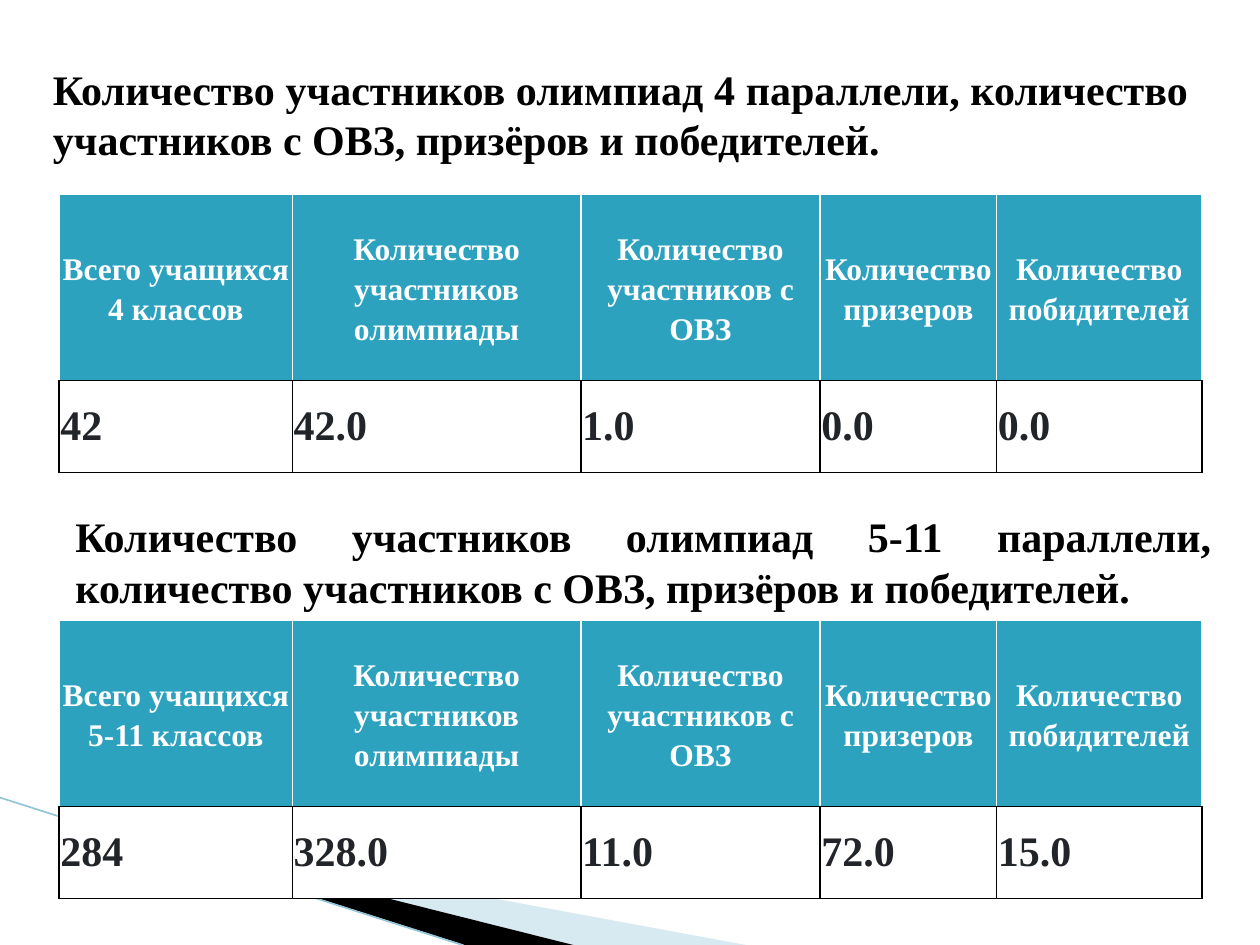
from lxml import etree
from pptx import Presentation
from pptx.dml.color import RGBColor as RGB
from pptx.enum.shapes import MSO_CONNECTOR as LINE
from pptx.enum.text import MSO_ANCHOR as ANCHOR, PP_ALIGN as ALIGN
from pptx.oxml import parse_xml
from pptx.oxml.ns import nsdecls, qn
from pptx.util import Inches, Pt

HUES = {"head": "2DA2BF", "white": "FFFFFF", "black": "000000",
        "ink": "212529", "pale": "9CCADC", "line": "93C5D8"}


def write(frame, text, size, hue, align):
    para = frame.paragraphs[0]
    para.alignment = align
    run = para.add_run()
    run.text = text
    run.font.name = "Times New Roman"
    run.font.size = Pt(size)
    run.font.bold = True
    run.font.color.rgb = RGB.from_string(HUES[hue])
    return para


def edge(cell, side, hue):
    """Draw one side (L, R, T or B) of a cell."""
    cell._tc.get_or_add_tcPr().append(parse_xml(
        f'<a:ln{side} {nsdecls("a")} w="12700"><a:solidFill>'
        f'<a:srgbClr val="{HUES[hue]}"/></a:solidFill></a:ln{side}>'))


deck = Presentation()
deck.slide_width, deck.slide_height = Inches(10), Inches(7.5)
slide = deck.slides.add_slide(deck.slide_layouts[5])
shapes = slide.shapes

# Corner wedges
wedges = [
    ("pale", 40, [(0.55, 6.51), (5.92, 7.5), (4.54, 7.5), (0.55, 6.5)]),
    ("black", 100, [(0.53, 6.49), (4.55, 7.5), (3.69, 7.5), (0.54, 6.5)]),
]
for hue, alpha, spots in wedges:
    spots = [(Inches(x), Inches(y)) for x, y in spots]
    pen = shapes.build_freeform(*spots[0], scale=1.0)
    pen.add_line_segments(spots[1:], close=True)
    wedge = pen.convert_to_shape()
    wedge.shadow.inherit = False
    wedge.line.fill.background()
    wedge.fill.solid()
    wedge.fill.fore_color.rgb = RGB.from_string(HUES[hue])
    if alpha < 100:
        color = wedge._element.spPr.find(f'{qn("a:solidFill")}/{qn("a:srgbClr")}')
        etree.SubElement(color, qn("a:alpha")).set("val", str(alpha * 1000))

rule = shapes.add_connector(LINE.STRAIGHT, Inches(0), Inches(6.33),
                            Inches(3.67), Inches(7.5))
rule.line.color.rgb = RGB.from_string(HUES["line"])
rule.line.width = Pt(0.95)
etree.SubElement(rule._element.spPr, qn("a:effectLst"))

# Headings
title = shapes.title
title.left, title.top = Inches(0.32), Inches(0.52)
title.width, title.height = Inches(9.21), Inches(1.12)
second = shapes.add_textbox(Inches(0.5), Inches(3.98), Inches(9.21), Inches(1.31))
for box, grade in [(title, "4"), (second, "5-11")]:
    frame = box.text_frame
    frame.word_wrap = True
    frame.vertical_anchor = ANCHOR.MIDDLE
    frame.margin_left = frame.margin_right = Inches(0.1)
    frame.margin_top, frame.margin_bottom = Inches(0.05), Inches(0.41)
    write(frame, f"Количество участников олимпиад {grade} параллели, "
          "количество участников с ОВЗ, призёров и победителей.",
          24, "black", ALIGN.JUSTIFY)

# Tables
heads = ["Количество участников олимпиады", "Количество участников с ОВЗ",
         "Количество призеров", "Количество побидителей"]
wide = [1.85, 2.29, 1.9, 1.4, 1.63]
tall = [1.48, 0.73]
tables = [
    (1.54, "4", ["42", "42.0", "1.0", "0.0", "0.0"]),
    (4.92, "5-11", ["284", "328.0", "11.0", "72.0", "15.0"]),
]
for top, grade, counts in tables:
    table = shapes.add_table(2, len(wide), Inches(0.47), Inches(top),
                             Inches(sum(wide)), Inches(sum(tall))).table
    for col, width in zip(table.columns, wide):
        col.width = Inches(width)
    for row, height in zip(table.rows, tall):
        row.height = Inches(height)
    rows = [[f"Всего учащихся {grade} классов", *heads], counts]
    for r, texts in enumerate(rows):
        for c, text in enumerate(texts):
            cell = table.cell(r, c)
            cell.vertical_anchor = ANCHOR.MIDDLE
            cell.margin_left = cell.margin_right = Inches(0.01)
            cell.margin_top = cell.margin_bottom = Inches(0.01)
            for side in "LRTB":
                edge(cell, side, "white" if r == 0 and side != "B" else "black")
            cell.fill.solid()
            cell.fill.fore_color.rgb = RGB.from_string(HUES["white" if r else "head"])
            if r == 0:
                para = write(cell.text_frame, text, 18, "white", ALIGN.CENTER)
                para.line_spacing = 1.15
            else:
                write(cell.text_frame, text, 24, "ink", ALIGN.LEFT)

deck.save("out.pptx")
